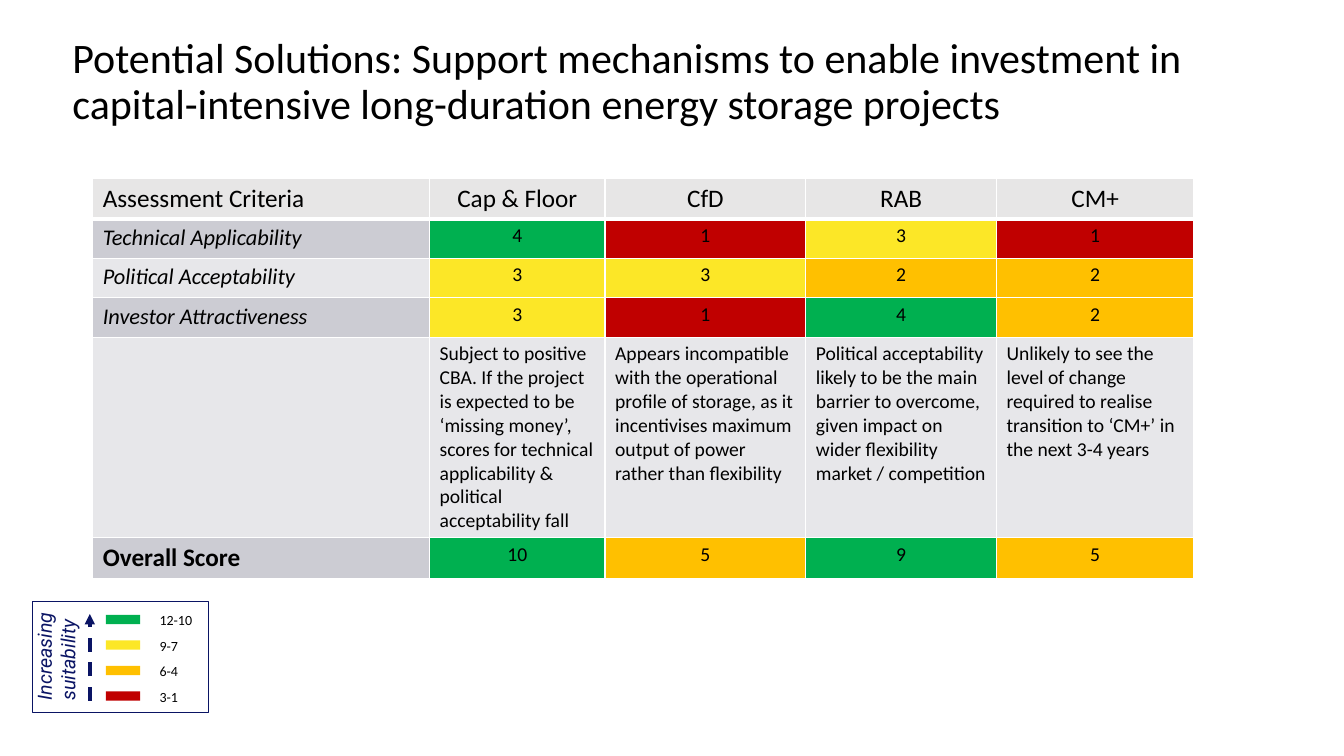
import pptx
import pptx.dml.color
import pptx.enum.dml
import pptx.enum.shapes
import pptx.enum.text
import pptx.oxml
import pptx.oxml.ns
import pptx.util

COLUMNS, ROWS = 160, 90
CELL = pptx.util.Inches(7.5) / ROWS

COLOURS = {
    "black": "000000", "white": "FFFFFF", "navy": "0A1464",
    "header": "E7E6E6", "dark band": "CCCCD3", "light band": "E7E7EA",
    "green": "00B050", "yellow": "FCE727", "amber": "FFC000", "red": "C00000",
}
SCORE_COLOURS = {1: "red", 2: "amber", 3: "yellow", 4: "green",
                 5: "amber", 9: "green", 10: "green"}

MECHANISMS = ["Cap & Floor", "CfD", "RAB", "CM+"]
CRITERIA = [
    ("Technical Applicability", [4, 1, 3, 1]),
    ("Political Acceptability", [3, 3, 2, 2]),
    ("Investor Attractiveness", [3, 1, 4, 2]),
]
REMARKS = [
    "Subject to positive CBA. If the project is expected to be ‘missing money’, "
    "scores for technical applicability & political acceptability fall",
    "Appears incompatible with the operational profile of storage, as it "
    "incentivises maximum output of power rather than flexibility",
    "Political acceptability likely to be the main barrier to overcome, "
    "given impact on wider flexibility market / competition",
    "Unlikely to see the level of change required to realise transition to "
    "‘CM+’ in the next 3-4 years",
]
OVERALL = [10, 5, 9, 5]
LEGEND = [("green", "12-10"), ("yellow", "9-7"), ("amber", "6-4"), ("red", "3-1")]


def grid(*cells):
    """Turn grid counts into lengths."""
    return [pptx.util.Emu(round(count * CELL)) for count in cells]


def colour(name):
    return pptx.dml.color.RGBColor.from_string(COLOURS[name])


class SlideBuilder:
    """Style and current slide; places are column, row, width, height."""

    def __init__(self, slide, font):
        self.slide = slide
        self.font = font

    def add_text(self, frame, text, size, tone="black", font=None,
                 bold=False, italic=False, centred=False):
        para = frame.paragraphs[0]
        if centred:
            para.alignment = pptx.enum.text.PP_ALIGN.CENTER
        span = para.add_run()
        span.text = text
        span.font.size = pptx.util.Pt(size)
        span.font.name = font or self.font
        span.font.bold = bold
        span.font.italic = italic
        span.font.color.rgb = colour(tone)
        return para

    def title(self, place, text):
        frame = self.slide.shapes.add_textbox(*grid(*place)).text_frame
        frame.word_wrap = True
        frame.vertical_anchor = pptx.enum.text.MSO_ANCHOR.BOTTOM
        self.add_text(frame, text, 30).line_spacing = 0.9

    def label(self, place, text, size, rotation=0, **style):
        box = self.slide.shapes.add_textbox(*grid(*place))
        box.rotation = rotation
        frame = box.text_frame
        frame.word_wrap = True
        frame.margin_left = frame.margin_right = 0
        frame.margin_top = frame.margin_bottom = 0
        self.add_text(frame, text, size, **style)

    def rectangle(self, place, fill=None, line=None):
        shape = self.slide.shapes.add_shape(
            pptx.enum.shapes.MSO_SHAPE.RECTANGLE, *grid(*place))
        shape.shadow.inherit = False
        if fill:
            shape.fill.solid()
            shape.fill.fore_color.rgb = colour(fill)
        else:
            shape.fill.background()
        if line:
            shape.line.color.rgb = colour(line)
            shape.line.width = pptx.util.Pt(1)
        else:
            shape.line.fill.background()

    def dashed_arrow(self, start, end, tone):
        arrow = self.slide.shapes.add_connector(
            pptx.enum.shapes.MSO_CONNECTOR.STRAIGHT, *grid(*start, *end))
        arrow.line.color.rgb = colour(tone)
        arrow.line.width = pptx.util.Pt(2.5)
        arrow.line.dash_style = pptx.enum.dml.MSO_LINE.DASH
        head = pptx.oxml.parse_xml(
            f'<a:tailEnd {pptx.oxml.ns.nsdecls("a")} type="triangle"/>')
        arrow.line._get_or_add_ln().append(head)
        arrow._element.spPr.append(pptx.oxml.parse_xml(
            f'<a:effectLst {pptx.oxml.ns.nsdecls("a")}/>'))

    def table(self, corner, widths, heights):
        frame = self.slide.shapes.add_table(
            len(heights), len(widths), *grid(*corner, sum(widths), sum(heights)))
        table = frame.table
        table.first_row = table.horz_banding = False
        for column, width in zip(table.columns, grid(*widths)):
            column.width = width
        for row, height in zip(table.rows, grid(*heights)):
            row.height = height
        return table

    def cell(self, cell, text, fill, size, bottom=1, **style):
        cell.fill.solid()
        cell.fill.fore_color.rgb = colour(fill)
        borders = {"lnL": 1, "lnR": 1, "lnT": 1, "lnB": bottom}
        for index, (side, points) in enumerate(borders.items()):
            cell._tc.get_or_add_tcPr().insert(index, pptx.oxml.parse_xml(
                f'<a:{side} {pptx.oxml.ns.nsdecls("a")} w="{pptx.util.Pt(points)}">'
                f'<a:solidFill><a:srgbClr val="{COLOURS["white"]}"/></a:solidFill>'
                f'</a:{side}>'))
        if text:
            self.add_text(cell.text_frame, text, size, **style)


def add_assessment(page):
    table = page.table((11.04, 21.24), [40.1, 20.9, 23.9, 22.7, 23.5],
                       [4.7, 4.7, 4.7, 4.7, 23.9, 4.7])
    for column, name in enumerate(["Assessment Criteria"] + MECHANISMS):
        page.cell(table.cell(0, column), name, "header", 18,
                  bottom=3, centred=column > 0)

    def score_row(row, name, scores, size, **style):
        band = "dark band" if row % 2 else "light band"
        page.cell(table.cell(row, 0), name, band, size, **style)
        for column, score in enumerate(scores, 1):
            page.cell(table.cell(row, column), str(score),
                      SCORE_COLOURS[score], 14, centred=True)

    for row, (name, scores) in enumerate(CRITERIA, 1):
        score_row(row, name, scores, 16, italic=True)
    for column, remark in enumerate([""] + REMARKS):
        page.cell(table.cell(4, column), remark, "light band", 14)
    score_row(5, "Overall Score", OVERALL, 18, bold=True)


def add_legend(page):
    for index, (tone, score_range) in enumerate(LEGEND):
        top = 73.2 + 3.04 * index
        page.rectangle((12.6, top, 4.1, 1.1), fill=tone)
        page.label((19, top - 0.36, 5.5, 1.8), score_range, 10)
    page.dashed_arrow((10.7, 83.4), (10.7, 73.1), "navy")
    page.label((-0.36, 75.96, 11.64, 3.24), "Increasing suitability", 14,
               rotation=270, tone="navy", font="Roboto", italic=True)
    page.rectangle((3.84, 71.64, 21, 13.2), line="navy")


def main():
    deck = pptx.Presentation()
    deck.slide_width, deck.slide_height = grid(COLUMNS, ROWS)
    page = SlideBuilder(deck.slides.add_slide(deck.slide_layouts[6]), "Calibri")
    page.title((7.44, 6.96, 138.1, 8.9),
               "Potential Solutions: Support mechanisms to enable investment in "
               "capital-intensive long-duration energy storage projects")
    add_assessment(page)
    add_legend(page)
    deck.save("out.pptx")


if __name__ == "__main__":
    main()
